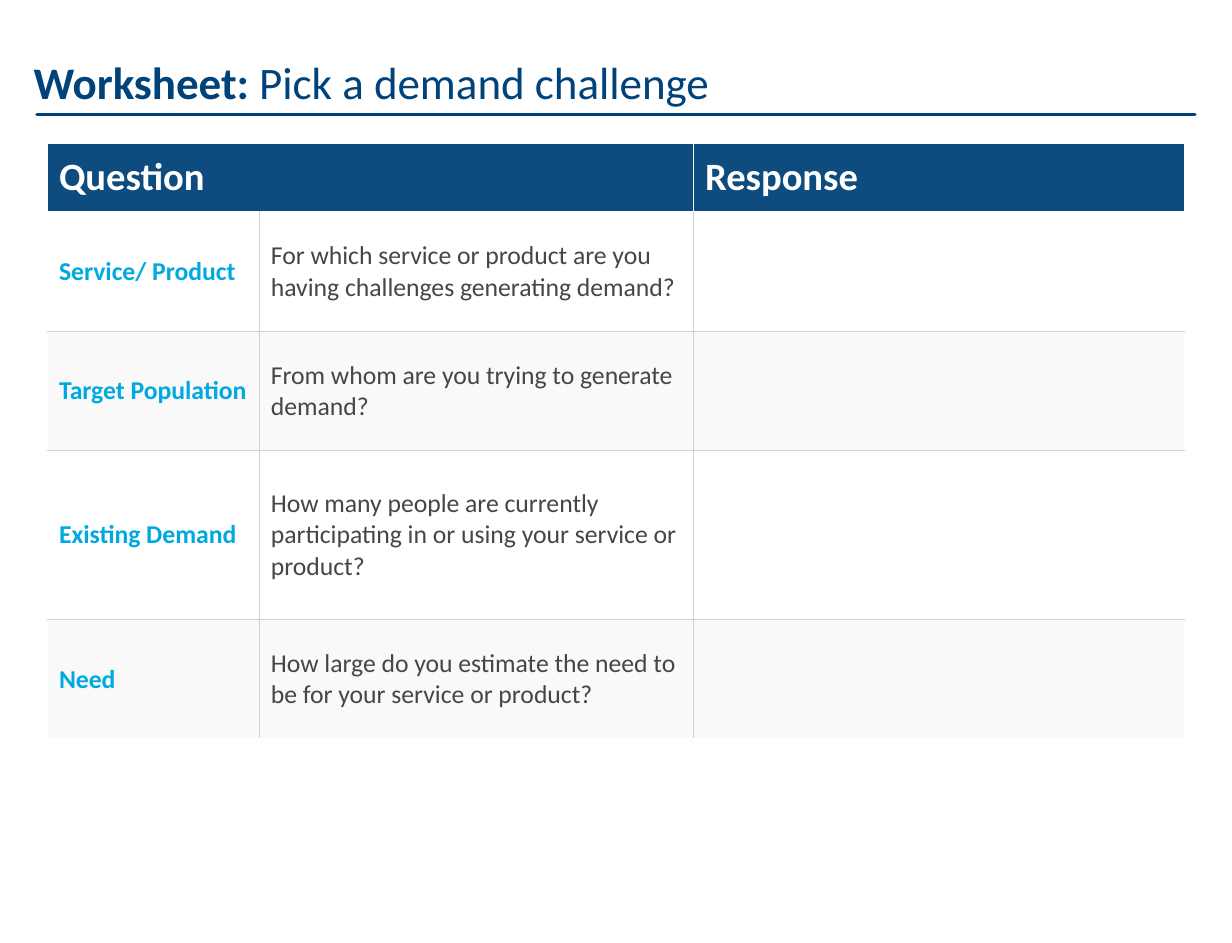
from lxml.etree import SubElement as Sub
from pptx import Presentation
from pptx.dml.color import RGBColor as RGB
from pptx.enum.shapes import MSO_CONNECTOR as Link
from pptx.enum.text import MSO_ANCHOR as Anchor, MSO_AUTO_SIZE as Auto, PP_ALIGN as Align
from pptx.oxml.ns import qn
from pptx.util import Inches, Pt

COLORS = {
    "navy": "00437A", "head": "0E4B7F", "cyan": "00A9E0", "text": "464547",
    "rule": "D0D1D3", "band": "F9F9F9", "white": "FFFFFF",
}
WIDTHS = [1.83, 3.75, 4.24]
HEIGHTS = [0.59, 1.03, 1.03, 1.46, 1.03]
ROWS = [
    ("Question", "", "Response"),
    ("Service/ Product", "For which service or product are you having challenges generating demand?", ""),
    ("Target Population", "From whom are you trying to generate demand?", ""),
    ("Existing Demand", "How many people are currently participating in or using your service or product?", ""),
    ("Need", "How large do you estimate the need to be for your service or product?", ""),
]


class Sheet:
    def __init__(self, deck):
        self.font = "Calibri"
        self.slide = deck.slides.add_slide(deck.slide_layouts[5])

    def color(self, name):
        return RGB.from_string(COLORS[name])

    def run(self, para, text, size, color, bold):
        run = para.add_run()
        run.text = text
        font = run.font
        font.name, font.size, font.bold = self.font, Pt(size), bold
        font.color.rgb = self.color(color)

    def title(self, box, parts):
        shape = self.slide.shapes.title
        shape.left, shape.top, shape.width, shape.height = map(Inches, box)
        frame = shape.text_frame
        frame.auto_size, frame.word_wrap = Auto.NONE, True
        frame.vertical_anchor = Anchor.BOTTOM
        para = frame.paragraphs[0]
        para.alignment, para.line_spacing = Align.LEFT, 0.9
        for text, bold in parts:
            self.run(para, text, 28, "navy", bold)

    def line(self, left, right, top):
        ends = map(Inches, (left, top, right, top))
        line = self.slide.shapes.add_connector(Link.STRAIGHT, *ends)
        line.line.color.rgb = self.color("navy")
        line.line.width = Pt(2.25)
        props = line._element.spPr
        props.find(qn("a:ln")).set("cap", "rnd")
        Sub(props, qn("a:effectLst"))

    def edge(self, cell, side, color):
        props = cell._tc.get_or_add_tcPr()
        line = Sub(props, qn("a:ln" + side), w=str(Pt(1)))
        fill = Sub(line, qn("a:solidFill"))
        Sub(fill, qn("a:srgbClr"), val=COLORS[color])

    def cell(self, grid, row, col, text):
        cell = grid.cell(row, col)
        head = row == 0
        sides = {
            "L": col > 0,
            "R": col < len(WIDTHS) - 1,
            "T": row > 1,
            "B": 0 < row < len(ROWS) - 1,
        }
        for side, shown in sides.items():
            if shown:
                self.edge(cell, side, "white" if head else "rule")
        cell.fill.solid()
        fill = "head" if head else "white" if row % 2 else "band"
        cell.fill.fore_color.rgb = self.color(fill)
        cell.vertical_anchor = Anchor.MIDDLE
        if text:
            color = "white" if head else "text" if col else "cyan"
            size = 24 if head else 16
            self.run(cell.text_frame.paragraphs[0], text, size, color, head or col == 0)

    def table(self, left, top):
        size = map(Inches, (left, top, sum(WIDTHS), sum(HEIGHTS)))
        grid = self.slide.shapes.add_table(len(ROWS), len(WIDTHS), *size).table
        grid.horz_banding = False
        for col, width in zip(grid.columns, WIDTHS):
            col.width = Inches(width)
        for row, height in zip(grid.rows, HEIGHTS):
            row.height = Inches(height)
        for row, texts in enumerate(ROWS):
            for col, text in enumerate(texts):
                self.cell(grid, row, col, text)
        grid.cell(0, 0).merge(grid.cell(0, 1))


def main():
    deck = Presentation()
    deck.slide_width, deck.slide_height = Inches(10.64), Inches(8.14)
    sheet = Sheet(deck)
    sheet.line(0.32, 10.32, 0.99)
    sheet.title((0.19, 0, 10.15, 0.99), [("Worksheet: ", True), ("Pick a demand challenge", False)])
    sheet.table(0.41, 1.24)
    deck.save("out.pptx")


if __name__ == "__main__":
    main()
